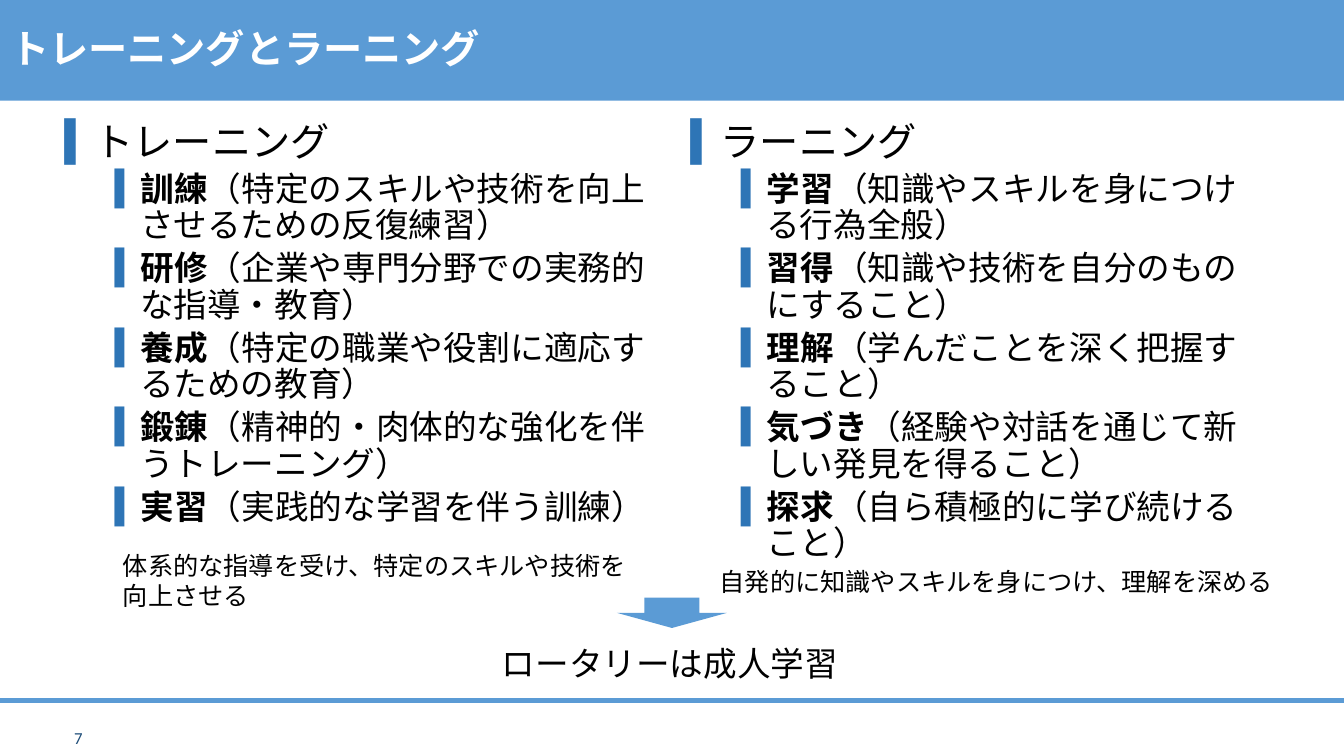
"""Build the slide that sets training beside learning."""
from dataclasses import dataclass

from lxml import etree
from pptx import Presentation
from pptx.dml.color import RGBColor
from pptx.enum.shapes import MSO_CONNECTOR, MSO_SHAPE
from pptx.enum.text import MSO_ANCHOR, MSO_AUTO_SIZE, PP_ALIGN
from pptx.oxml.ns import qn
from pptx.util import Inches, Pt

STRAIGHT = MSO_CONNECTOR.STRAIGHT
DOWN_ARROW = MSO_SHAPE.DOWN_ARROW
MIDDLE, TOP = MSO_ANCHOR.MIDDLE, MSO_ANCHOR.TOP
NO_FIT, GROW = MSO_AUTO_SIZE.NONE, MSO_AUTO_SIZE.SHAPE_TO_FIT_TEXT
LEFT, RIGHT = PP_ALIGN.LEFT, PP_ALIGN.RIGHT

COLORS = {"band": "5B9BD5", "marker": "2E75B6", "number": "1F4E79",
          "text": "000000", "white": "FFFFFF"}
LATIN, JAPANESE = "Calibri", "Noto Sans CJK JP"
SLIDE_WIDTH, SLIDE_HEIGHT = Inches(13.33), Inches(7.5)
RULE_TOP = 92.67
HANGING = 0.25


@dataclass(frozen=True)
class Area:
    """Place on the slide, in percent of its width and height."""
    left: float
    top: float
    width: float
    height: float

    def emu(self) -> tuple[int, int, int, int]:
        return (across(self.left), down(self.top),
                across(self.width), down(self.height))


@dataclass(frozen=True)
class Topic:
    """Heading with its terms and their explanations."""
    area: Area
    heading: str
    terms: dict[str, str]


@dataclass(frozen=True)
class Note:
    """Free text standing outside the lists."""
    area: Area
    lines: tuple[str, ...]
    size: int
    color: str = "text"
    align: PP_ALIGN = LEFT
    anchor: MSO_ANCHOR = TOP
    fit: MSO_AUTO_SIZE = GROW
    wrap: bool = False
    space_after: int = 0


TOPICS = (
    Topic(Area(4.05, 15.6, 45.31, 63.47), "トレーニング", {
        "訓練": "特定のスキルや技術を向上させるための反復練習",
        "研修": "企業や専門分野での実務的な指導・教育",
        "養成": "特定の職業や役割に適応するための教育",
        "鍛錬": "精神的・肉体的な強化を伴うトレーニング",
        "実習": "実践的な学習を伴う訓練",
    }),
    Topic(Area(50.64, 15.6, 44.11, 63.47), "ラーニング", {
        "学習": "知識やスキルを身につける行為全般",
        "習得": "知識や技術を自分のものにすること",
        "理解": "学んだことを深く把握すること",
        "気づき": "経験や対話を通じて新しい発見を得ること",
        "探求": "自ら積極的に学び続けること",
    }),
)
NOTES = (
    Note(Area(0, 94.93, 6.9, 5.33), ("7",), 12, "number", RIGHT, MIDDLE,
         NO_FIT, True, 6),
    Note(Area(36.61, 84.4, 26.78, 6.67), ("ロータリーは成人学習",), 24),
    Note(Area(8.4, 72.13, 39.38, 9.47),
         ("体系的な指導を受け、特定のスキルや技術を", "向上させる"), 18),
    Note(Area(52.81, 74.27, 43.21, 5.33),
         ("自発的に知識やスキルを身につけ、理解を深める",), 18),
)


def across(percent: float) -> int:
    return round(SLIDE_WIDTH * percent / 100)


def down(percent: float) -> int:
    return round(SLIDE_HEIGHT * percent / 100)


def rgb(name: str) -> RGBColor:
    return RGBColor.from_string(COLORS[name])


def assign(target, values: dict) -> None:
    for name, value in values.items():
        setattr(target, name, value)


def place(shape, area: Area) -> None:
    assign(shape, dict(zip(("left", "top", "width", "height"), area.emu())))


def add_words(paragraph, words: str, size: int, color: str = "text",
              bold: bool = False, latin: str = LATIN) -> None:
    run = paragraph.add_run()
    run.text = words
    assign(run.font, {"size": Pt(size), "bold": bold, "name": latin})
    run.font.color.rgb = rgb(color)
    run.font._element.find(qn("a:latin")).addnext(
        etree.Element(qn("a:ea"), typeface=JAPANESE))


def add_marker(paragraph, indent: float) -> None:
    properties = paragraph._p.get_or_add_pPr()
    properties.set("marL", str(Inches(indent)))
    properties.set("indent", str(-Inches(HANGING)))
    tint = etree.SubElement(properties, qn("a:buClr"))
    etree.SubElement(tint, qn("a:srgbClr"), val=COLORS["marker"])
    etree.SubElement(properties, qn("a:buChar"), char="▍")


def paint(shape, color: str) -> None:
    shape.fill.solid()
    shape.fill.fore_color.rgb = rgb(color)


def fill_title(title) -> None:
    place(title, Area(0, 0, 100, 13.33))
    paint(title, "band")
    assign(title.text_frame, {"auto_size": NO_FIT, "vertical_anchor": MIDDLE})
    heading = title.text_frame.paragraphs[0]
    assign(heading, {"alignment": LEFT, "line_spacing": 0.9,
                     "space_before": Pt(0)})
    add_words(heading, "トレーニングとラーニング", 28, "white", True, JAPANESE)


def fill_topic(body, topic: Topic) -> None:
    place(body, topic.area)
    assign(body.text_frame, {"auto_size": NO_FIT, "vertical_anchor": TOP})
    heading = body.text_frame.paragraphs[0]
    add_marker(heading, HANGING)
    assign(heading, {"line_spacing": 0.9, "space_before": Pt(0)})
    add_words(heading, topic.heading, 28)
    for term, meaning in topic.terms.items():
        entry = body.text_frame.add_paragraph()
        add_marker(entry, 3 * HANGING)
        assign(entry, {"level": 1, "line_spacing": 0.9, "space_before": Pt(5)})
        add_words(entry, term, 24, bold=True)
        add_words(entry, f"（{meaning}）", 24)


def add_note(slide, note: Note) -> None:
    frame = slide.shapes.add_textbox(*note.area.emu()).text_frame
    assign(frame, {"word_wrap": note.wrap, "auto_size": note.fit,
                   "vertical_anchor": note.anchor})
    for number, line in enumerate(note.lines):
        paragraph = frame.add_paragraph() if number else frame.paragraphs[0]
        assign(paragraph, {"alignment": note.align,
                           "space_after": Pt(note.space_after)})
        add_words(paragraph, line, note.size, note.color)


def add_rule(slide) -> None:
    rule = slide.shapes.add_connector(
        STRAIGHT, 0, down(RULE_TOP), SLIDE_WIDTH, down(RULE_TOP))
    rule.line.width = Pt(3)
    rule.line.color.rgb = rgb("band")
    etree.SubElement(rule._element.spPr, qn("a:effectLst"))


def add_arrow(slide) -> None:
    arrow = slide.shapes.add_shape(
        DOWN_ARROW, *Area(45.91, 79.07, 8.18, 4).emu())
    arrow.shadow.inherit = False
    paint(arrow, "band")
    arrow.line.fill.background()


def main() -> None:
    deck = Presentation()
    assign(deck, {"slide_width": SLIDE_WIDTH, "slide_height": SLIDE_HEIGHT})
    slide = deck.slides.add_slide(deck.slide_layouts.get_by_name("Two Content"))
    title, *bodies = slide.placeholders
    fill_title(title)
    for body, topic in zip(bodies, TOPICS):
        fill_topic(body, topic)
    add_rule(slide)
    add_arrow(slide)
    for note in NOTES:
        add_note(slide, note)
    deck.save("out.pptx")


if __name__ == "__main__":
    main()
